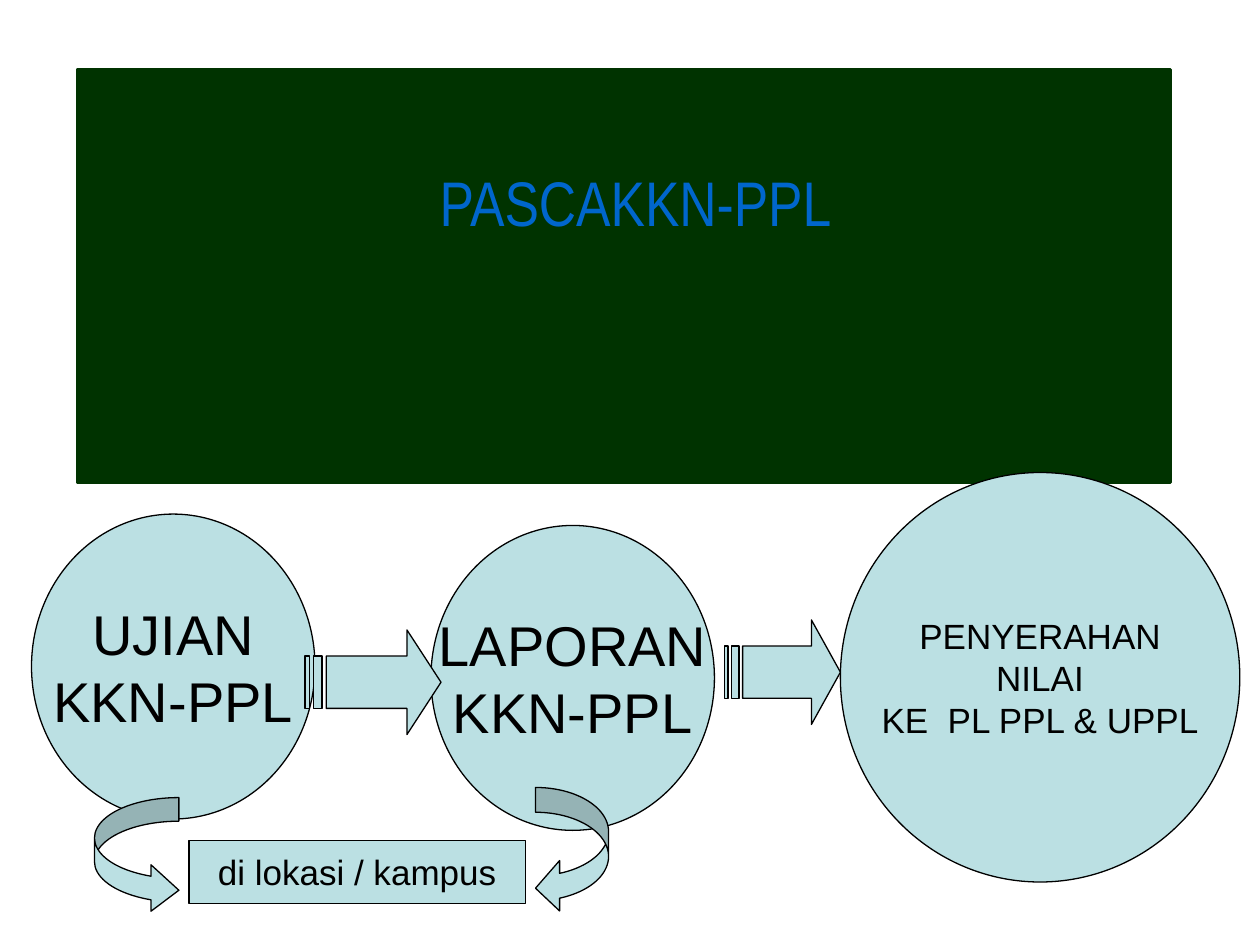
import pptx
import pptx.util
import pptx.dml.color
import pptx.enum.shapes
import pptx.enum.text
import pptx.oxml
from lxml import etree
from dataclasses import dataclass

Inches = pptx.util.Inches
Pt = pptx.util.Pt
RGB = pptx.dml.color.RGBColor.from_string
MSO = pptx.enum.shapes.MSO_SHAPE


@dataclass
class Theme:
    panel: str = "003300"
    title: str = "0066CC"
    glow: str = "99CCFF"
    pale: str = "BBE0E3"
    ink: str = "000000"
    font: str = "Arial"
    title_font: str = "Arial Narrow"
    title_size: int = 36
    large: int = 32
    small: int = 20


theme = Theme()


def paint(sp, fill=theme.pale, line=theme.ink, width=0.75):
    sp.shadow.inherit = False
    sp.fill.solid()
    sp.fill.fore_color.rgb = RGB(fill)
    sp.line.color.rgb = RGB(line)
    sp.line.width = Pt(width)


def write(sp, lines, size, font=theme.font, color=theme.ink):
    tf = sp.text_frame
    tf.word_wrap = False
    tf.text = "\n".join(lines)
    for p in tf.paragraphs:
        p.alignment = pptx.enum.text.PP_ALIGN.CENTER
        p.font.size = Pt(size)
        p.font.name = font
        p.font.color.rgb = RGB(color)


prs = pptx.Presentation()
prs.slide_width = Inches(10)
prs.slide_height = Inches(7.5)
s = prs.slides.add_slide(prs.slide_layouts[6])

panel = s.shapes.add_shape(MSO.RECTANGLE, Inches(0.62), Inches(0.55), Inches(8.67), Inches(3.28))
paint(panel, theme.panel, theme.panel, 2)

title = s.shapes.add_textbox(Inches(1.17), Inches(1.25), Inches(7.75), Inches(1.83))
write(title, ["PASCAKKN-PPL"], theme.title_size, theme.title_font, theme.title)
r = title.text_frame.paragraphs[0].runs[0]
ns = "http://schemas.openxmlformats.org/drawingml/2006/main"
outline = etree.fromstring(
    f'<a:ln xmlns:a="{ns}" w="{Pt(1.5)}"><a:solidFill>'
    f'<a:srgbClr val="{theme.glow}"/></a:solidFill></a:ln>'
)
r.font._element.insert(0, outline)

steps = [
    (MSO.OVAL, 0.25, 4.08, 2.25, 2.42, ["UJIAN", "KKN-PPL"], theme.large),
    (MSO.OVAL, 3.42, 4.17, 2.25, 2.42, ["LAPORAN", "KKN-PPL"], theme.large),
    (MSO.OVAL, 6.67, 3.75, 3.17, 3.25, ["PENYERAHAN", "NILAI", "KE  PL PPL & UPPL"], theme.small),
    (MSO.RECTANGLE, 1.5, 6.67, 2.67, 0.5, ["di lokasi / kampus"], theme.small),
]
for kind, x, y, w, h, lines, size in steps:
    sp = s.shapes.add_shape(kind, Inches(x), Inches(y), Inches(w), Inches(h))
    paint(sp)
    write(sp, lines, size)
    sp.text_frame.vertical_anchor = pptx.enum.text.MSO_ANCHOR.MIDDLE

head = [(24, 0), (24, 1), (5, 1), (5, 3), (24, 3), (24, 4), (32, 2)]
stripes = [[(a, 1), (a, 3), (b, 3), (b, 1)] for a, b in [(2, 4), (0, 1)]]
for x, y, w, h in [(2.42, 5, 1.08, 0.83), (5.75, 4.92, 0.92, 0.83)]:
    builder = None
    for outline_points in [head] + stripes:
        points = [(Inches(x + w * u / 32), Inches(y + h * v / 4)) for u, v in outline_points]
        if builder is None:
            builder = s.shapes.build_freeform(*points[0])
        else:
            builder.move_to(*points[0])
        builder.add_line_segments(points[1:], close=True)
    paint(builder.convert_to_shape())

curves = [
    (MSO.CURVED_RIGHT_ARROW, 0.75, 6.33, 0.67, 0.92, (0.275, 0.55, 0.33)),
    (MSO.CURVED_LEFT_ARROW, 4.25, 6.25, 0.58, 1, (0.343, 0.686, 0.33)),
]
for kind, x, y, w, h, bends in curves:
    sp = s.shapes.add_shape(kind, Inches(x), Inches(y), Inches(w), Inches(h))
    paint(sp)
    for i, bend in enumerate(bends):
        sp.adjustments[i] = round(bend, 2)

prs.save("out.pptx")
